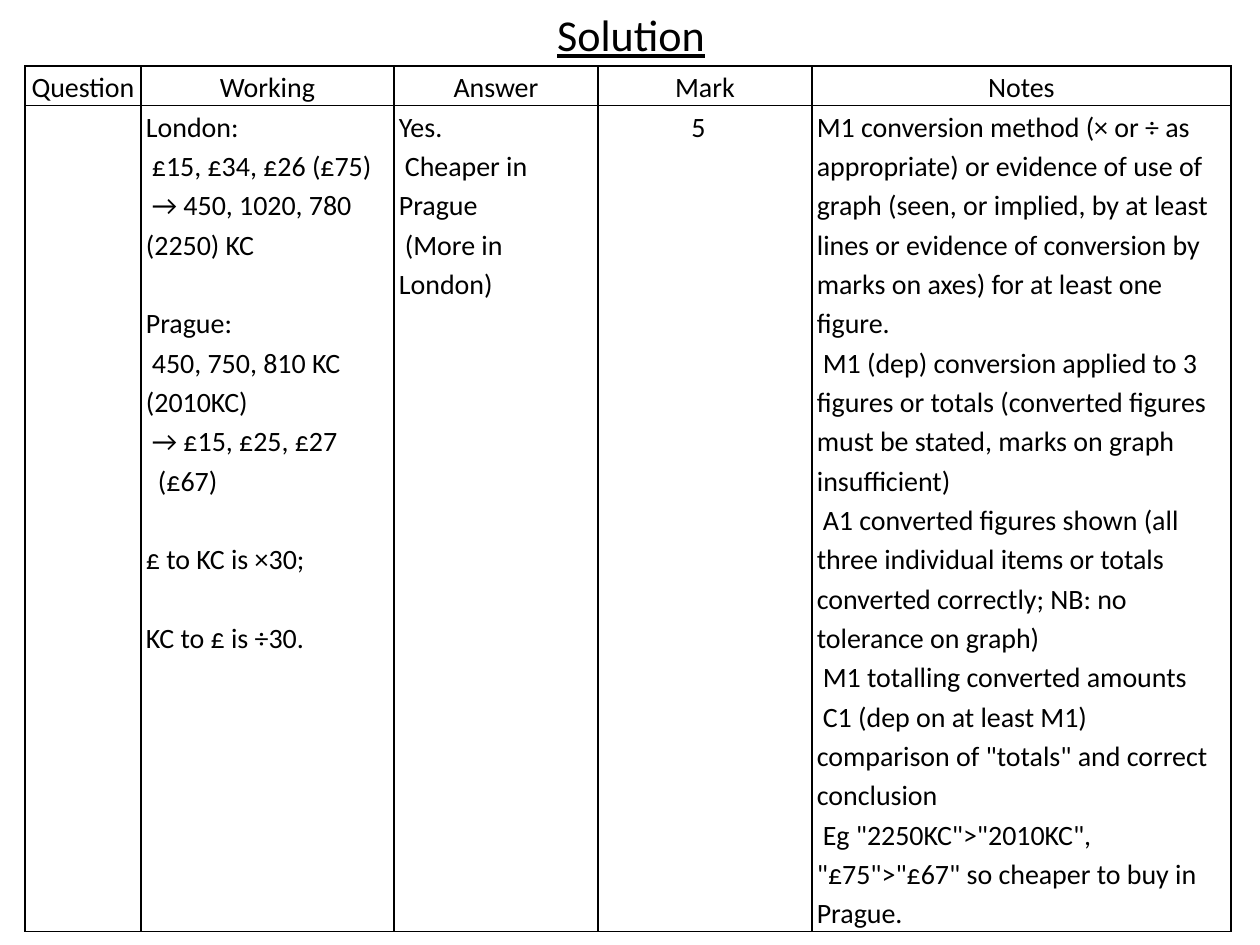
from lxml import etree
from pptx import Presentation
from pptx import util as u
from pptx.dml.color import RGBColor
from pptx.enum import text
from pptx.oxml import ns

PX = 914400 / 126
BLACK = RGBColor(0, 0, 0)
FONT = "Calibri"
SIZE = 16
BLANK_LINE = 22.5  # points
SPACE_WIDTH = 6    # px
CENTER, LEFT = text.PP_ALIGN.CENTER, text.PP_ALIGN.LEFT

COLUMN_WIDTHS = [116, 253, 204, 214, 419]
ROW_HEIGHTS = [39, 826]
HEADINGS = ["Question", "Working", "Answer", "Mark", "Notes"]

WORKING = """London:
 £15, £34, £26 (£75)
 → 450, 1020, 780 (2250) KC

Prague:
 450, 750, 810 KC (2010KC)
 → £15, £25, £27
  (£67)

£ to KC is ×30;

KC to £ is ÷30."""
ANSWER = """Yes.
 Cheaper in Prague
 (More in London)"""
MARK = "5"
NOTES = """M1 conversion method (× or ÷ as appropriate) or evidence of use of graph (seen, or implied, by at least lines or evidence of conversion by marks on axes) for at least one figure.
 M1 (dep) conversion applied to 3 figures or totals (converted figures must be stated, marks on graph insufficient)
 A1 converted figures shown (all three individual items or totals converted correctly; NB: no tolerance on graph)
 M1 totalling converted amounts
 C1 (dep on at least M1) comparison of "totals" and correct conclusion
 Eg "2250KC">"2010KC", "£75">"£67" so cheaper to buy in Prague."""


def px(n):
    return u.Emu(round(n * PX))


def style_runs(p, size, underline=False):
    for r in p.runs:
        f = r.font
        f.name, f.size, f.bold, f.underline = FONT, u.Pt(size), False, underline
        f.color.rgb = BLACK


def add_borders(cell):
    tc_pr = cell._tc.get_or_add_tcPr()
    for i, side in enumerate(("lnL", "lnR", "lnT", "lnB")):
        ln = etree.Element(ns.qn("a:" + side), w=str(u.Pt(1)))
        fill = etree.SubElement(ln, ns.qn("a:solidFill"))
        etree.SubElement(fill, ns.qn("a:srgbClr"), val=str(BLACK))
        tc_pr.insert(i, ln)


def write_lines(tf, content, align):
    """One paragraph a line; leading spaces become an indent, blank lines a gap."""
    p, gap = tf.paragraphs[0], False
    for i, line in enumerate(content.split("\n")):
        if not line:
            gap = True
            continue
        if i:
            p = tf.add_paragraph()
        p.text = line.strip()
        p.alignment, p.line_spacing = align, 1.15
        if gap:
            p.space_before = u.Pt(BLANK_LINE)
        indent = len(line) - len(line.lstrip())
        if indent:
            p._p.get_or_add_pPr().set("indent", str(px(indent * SPACE_WIDTH)))
        style_runs(p, SIZE)
        gap = False


def fill_cell(cell, content, align):
    cell.margin_left = cell.margin_right = px(5)
    cell.margin_top = cell.margin_bottom = 0
    cell.fill.background()
    add_borders(cell)
    if content:
        write_lines(cell.text_frame, content, align)


def place_title(sp, left, top, width, height):
    sp.left, sp.top, sp.width, sp.height = map(px, (left, top, width, height))
    tf = sp.text_frame
    tf.text = "Solution"
    tf.auto_size = text.MSO_AUTO_SIZE.NONE
    tf.vertical_anchor = text.MSO_ANCHOR.MIDDLE
    p = tf.paragraphs[0]
    p.alignment = CENTER
    style_runs(p, 25.2, underline=True)


def add_mark_scheme(s, left, top):
    size = sum(COLUMN_WIDTHS), sum(ROW_HEIGHTS)
    table = s.shapes.add_table(2, len(HEADINGS), *map(px, (left, top, *size))).table
    table.first_row = table.horz_banding = False
    for column, width in zip(table.columns, COLUMN_WIDTHS):
        column.width = px(width)
    for row, height in zip(table.rows, ROW_HEIGHTS):
        row.height = px(height)
    answers = ["", WORKING, ANSWER, MARK, NOTES]
    for c, (heading, answer) in enumerate(zip(HEADINGS, answers)):
        fill_cell(table.cell(0, c), heading, CENTER)
        fill_cell(table.cell(1, c), answer, CENTER if answer == MARK else LEFT)
    table.cell(0, 0).vertical_anchor = text.MSO_ANCHOR.MIDDLE
    table.cell(1, HEADINGS.index("Mark")).margin_right = px(18)


def main():
    prs = Presentation()
    prs.slide_width, prs.slide_height = u.Inches(10), u.Inches(7.5)
    s = prs.slides.add_slide(prs.slide_layouts.get_by_name("Title Only"))
    place_title(s.shapes.title, 64, 0, 1134, 68)
    add_mark_scheme(s, 25, 66)
    prs.save("out.pptx")


if __name__ == "__main__":
    main()
